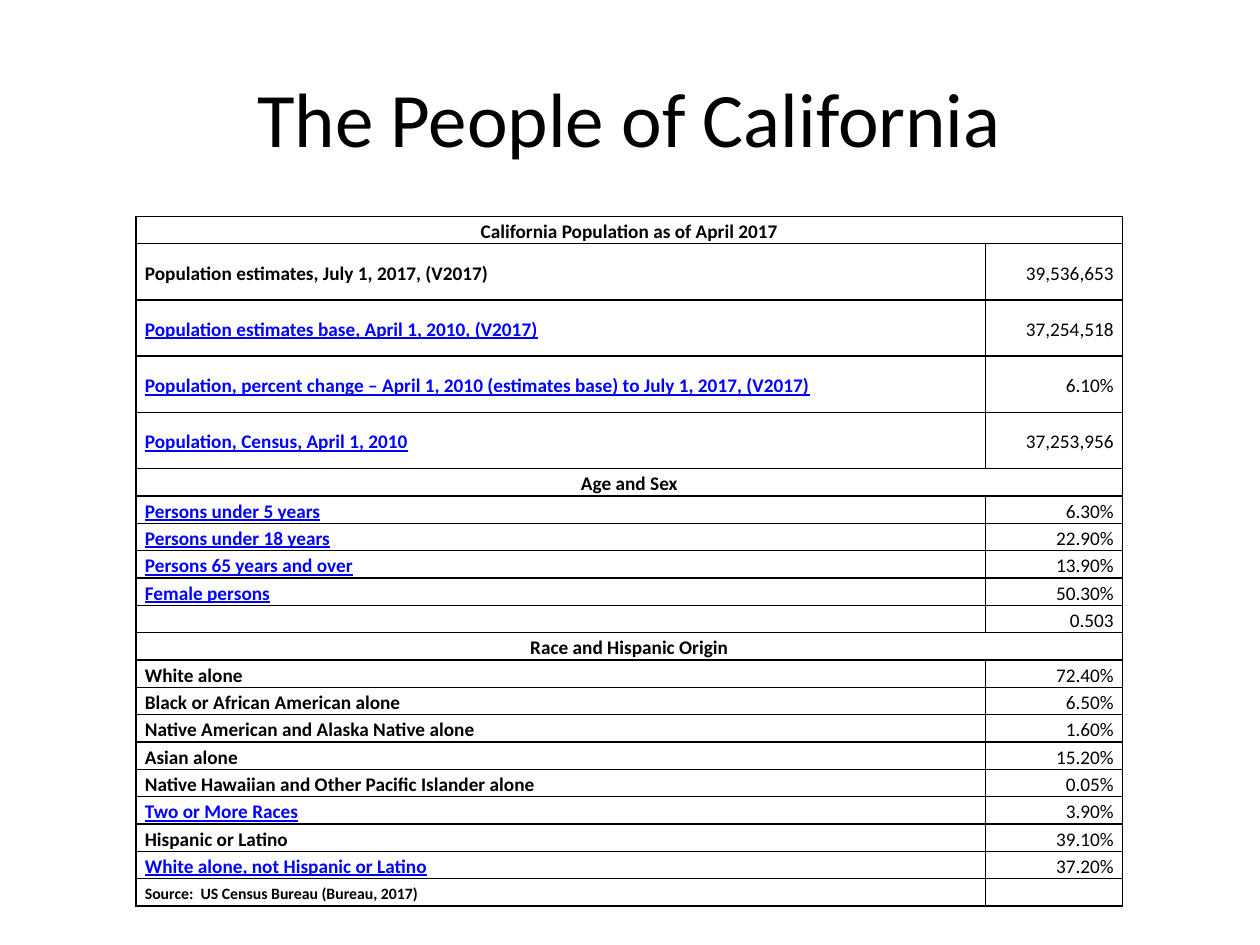
import dataclasses
import typing

import lxml.etree
import pptx
import pptx.dml.color
import pptx.enum.text
import pptx.oxml.ns
import pptx.util

ALIGN = pptx.enum.text.PP_ALIGN
MID = pptx.enum.text.MSO_ANCHOR.MIDDLE


@dataclasses.dataclass(frozen=True)
class Theme:
    font: str = "Calibri"
    ink: str = "000000"
    link: str = "0000FF"
    paper: str = "FFFFFF"
    title: float = 44
    body: float = 11
    note: float = 9
    rule: float = 1
    lead: float = 1.15


@dataclasses.dataclass(frozen=True)
class Row:
    label: str
    value: str = ""
    link: bool = False
    units: float = 1
    head: bool = False
    note: bool = False


@dataclasses.dataclass(frozen=True)
class Box:
    left: float
    top: float
    width: float
    height: float


LOOK = Theme()
WIDE = pptx.util.Inches(10)
HIGH = pptx.util.Inches(7.5)
TITLE = Box(0.108, 0.04, 0.783, 0.167)
GRID = Box(0.108, 0.229, 0.783, 0.73)
SPLIT = 0.861
TALL = 2.06

ROWS = [
    Row("California Population as of April 2017", head=True),
    Row("Population estimates, July 1, 2017, (V2017)", "39,536,653", units=TALL),
    Row("Population estimates base, April 1, 2010, (V2017)", "37,254,518", True, TALL),
    Row("Population, percent change – April 1, 2010 (estimates base) to July 1, 2017, (V2017)",
        "6.10%", True, TALL),
    Row("Population, Census, April 1, 2010", "37,253,956", True, TALL),
    Row("Age and Sex", head=True),
    Row("Persons under 5 years", "6.30%", True),
    Row("Persons under 18 years", "22.90%", True),
    Row("Persons 65 years and over", "13.90%", True),
    Row("Female persons", "50.30%", True),
    Row("", "0.503"),
    Row("Race and Hispanic Origin", head=True),
    Row("White alone", "72.40%"),
    Row("Black or African American alone", "6.50%"),
    Row("Native American and Alaska Native alone", "1.60%"),
    Row("Asian alone", "15.20%"),
    Row("Native Hawaiian and Other Pacific Islander alone", "0.05%"),
    Row("Two or More Races", "3.90%", True),
    Row("Hispanic or Latino", "39.10%"),
    Row("White alone, not Hispanic or Latino", "37.20%", True),
    Row("Source:  US Census Bureau (Bureau, 2017)", note=True),
]


def place(box: Box) -> tuple[int, int, int, int]:
    return (int(WIDE * box.left), int(HIGH * box.top),
            int(WIDE * box.width), int(HIGH * box.height))


def write(frame: typing.Any, text: str, *, size: float = LOOK.body,
          color: str = LOOK.ink, bold: bool = False, line: bool = False,
          align: typing.Any = ALIGN.LEFT, lead: float = LOOK.lead) -> None:
    para = frame.paragraphs[0]
    para.alignment = align
    para.line_spacing = lead
    if not text:
        para._p.get_or_add_endParaRPr().set("sz", str(int(size * 100)))
        return
    run = para.add_run()
    run.text = text
    font = run.font
    font.name = LOOK.font
    font.size = pptx.util.Pt(size)
    font.bold = bold
    font.underline = line
    font.color.rgb = pptx.dml.color.RGBColor.from_string(color)


def dress(cell: typing.Any) -> None:
    cell.margin_left = cell.margin_right = pptx.util.Inches(0.07)
    cell.margin_top = cell.margin_bottom = 0
    cell.vertical_anchor = MID
    props = cell._tc.get_or_add_tcPr()
    name = pptx.oxml.ns.qn
    for side in ("a:lnL", "a:lnR", "a:lnT", "a:lnB"):
        edge = lxml.etree.SubElement(props, name(side), w=str(pptx.util.Pt(LOOK.rule)))
        fill = lxml.etree.SubElement(edge, name("a:solidFill"))
        lxml.etree.SubElement(fill, name("a:srgbClr"), val=LOOK.ink)
    cell.fill.solid()
    cell.fill.fore_color.rgb = pptx.dml.color.RGBColor.from_string(LOOK.paper)


def fill_row(table: typing.Any, index: int, row: Row) -> None:
    left, right = table.cell(index, 0), table.cell(index, 1)
    dress(left)
    dress(right)
    write(left.text_frame, row.label, bold=True, line=row.link,
          size=LOOK.note if row.note else LOOK.body,
          color=LOOK.link if row.link else LOOK.ink,
          align=ALIGN.CENTER if row.head else ALIGN.LEFT)
    write(right.text_frame, row.value, align=ALIGN.RIGHT)
    if row.head:
        left.merge(right)


def draw_table(slide: typing.Any, rows: list[Row]) -> None:
    left, top, width, height = place(GRID)
    table = slide.shapes.add_table(len(rows), 2, left, top, width, height).table
    table.first_row = table.horz_banding = False
    table.columns[0].width = int(width * SPLIT)
    table.columns[1].width = width - table.columns[0].width
    unit = height / sum(row.units for row in rows)
    for index, row in enumerate(rows):
        table.rows[index].height = int(unit * row.units)
        fill_row(table, index, row)


def draw_title(slide: typing.Any, text: str) -> None:
    title = slide.shapes.title
    title.left, title.top, title.width, title.height = place(TITLE)
    title.text_frame.vertical_anchor = MID
    write(title.text_frame, text, size=LOOK.title, align=ALIGN.CENTER, lead=1.0)


def main() -> None:
    deck = pptx.Presentation()
    deck.slide_width, deck.slide_height = WIDE, HIGH
    slide = deck.slides.add_slide(deck.slide_layouts[5])
    draw_title(slide, "The People of California")
    draw_table(slide, ROWS)
    deck.save("out.pptx")


if __name__ == "__main__":
    main()
